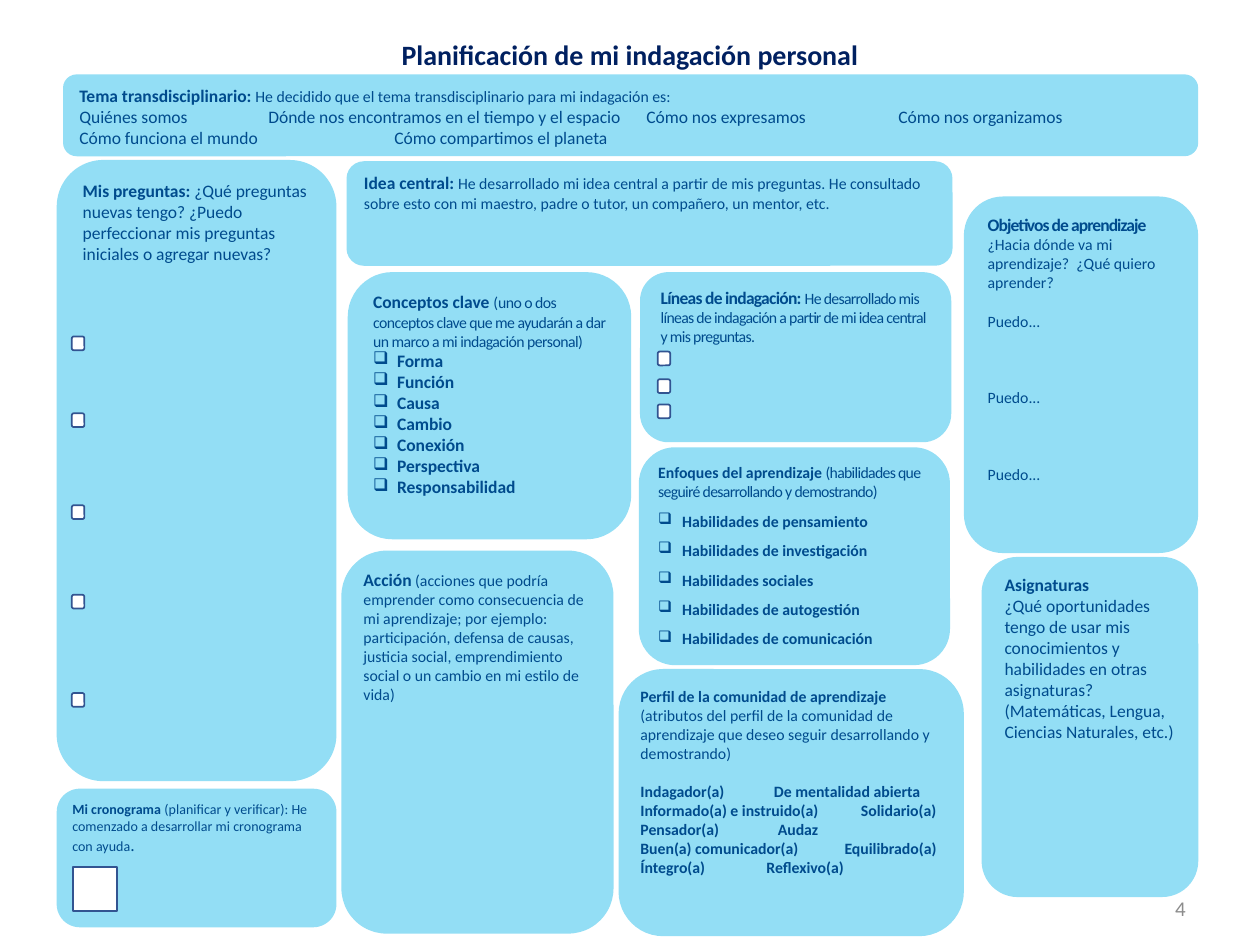
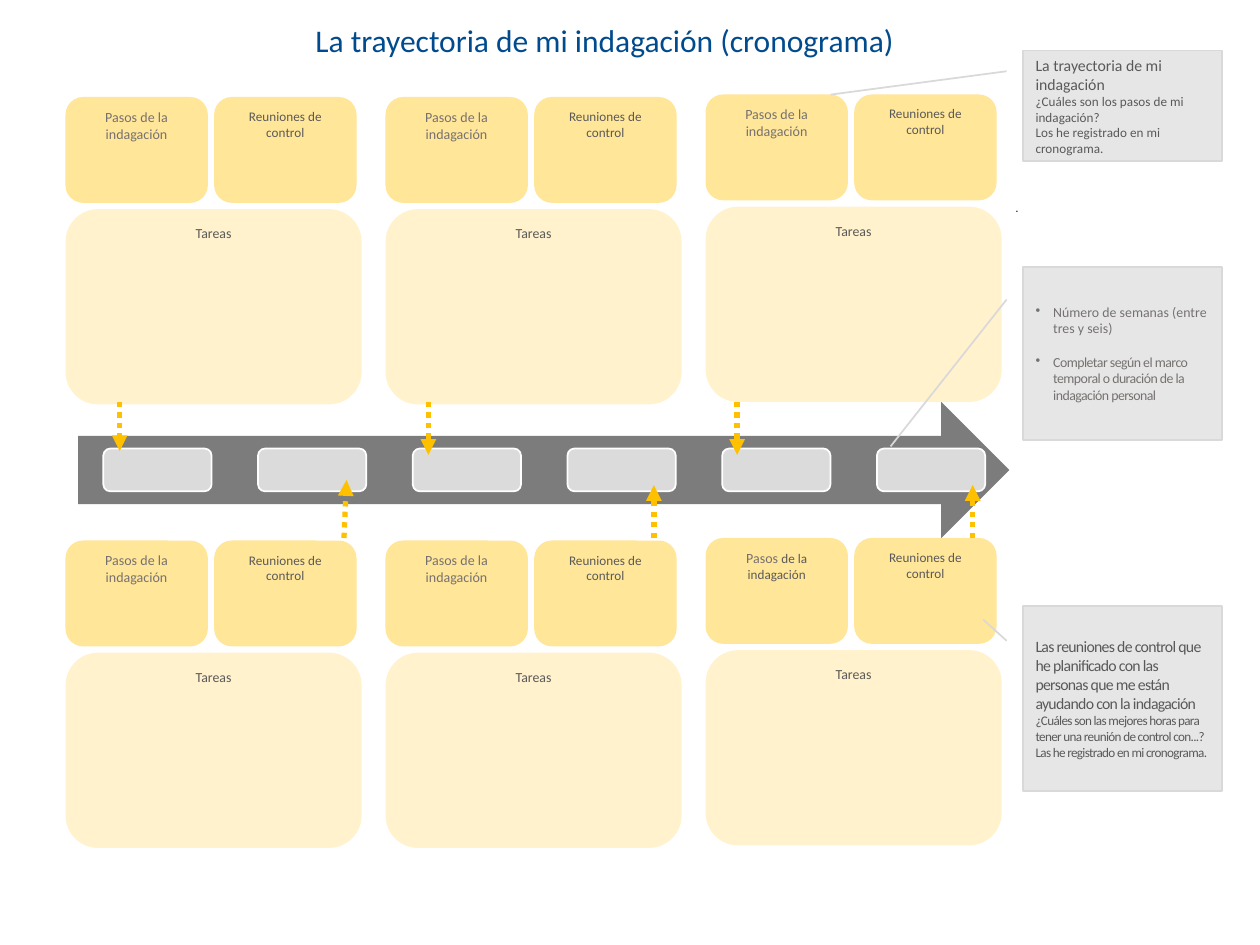
from lxml import etree
from pptx import Presentation
from pptx.dml.color import RGBColor
from pptx.enum import dml, shapes, text
from pptx.oxml.ns import qn
from pptx.util import Inches, Pt

FONT = "Calibri"
WHITE = RGBColor(0xFF, 0xFF, 0xFF)
BLACK = RGBColor(0x00, 0x00, 0x00)
NAVY = RGBColor(0x00, 0x20, 0x60)
BLUE = RGBColor(0x00, 0x4B, 0x8D)
SKY = RGBColor(0x93, 0xDE, 0xF5)
CHECK_LINE = RGBColor(0x32, 0x54, 0x91)
PAGE_GRAY = RGBColor(0x8C, 0x8C, 0x8C)
DARK_GRAY = RGBColor(0x59, 0x59, 0x59)
WARM_GRAY = RGBColor(0x76, 0x71, 0x71)
ARROW_GRAY = RGBColor(0x7C, 0x7C, 0x7C)
WEEK_GRAY = RGBColor(0xDB, 0xDB, 0xDB)
NOTE_FILL = RGBColor(0xE7, 0xE6, 0xE6)
NOTE_LINE = RGBColor(0xD9, 0xD9, 0xD9)
AMBER = RGBColor(0xFF, 0xC0, 0x00)
YELLOW = RGBColor(0xFF, 0xE6, 0x99)
CREAM = RGBColor(0xFF, 0xF2, 0xCC)

ROUND = shapes.MSO_SHAPE.ROUNDED_RECTANGLE
TOP, MIDDLE = text.MSO_ANCHOR.TOP, text.MSO_ANCHOR.MIDDLE
LEFT, CENTER, RIGHT = text.PP_ALIGN.LEFT, text.PP_ALIGN.CENTER, text.PP_ALIGN.RIGHT


def add_box(page, kind, at, fill, line=None):
    box = page.shapes.add_shape(kind, *map(Inches, at))
    box.shadow.inherit = False
    box.fill.solid()
    box.fill.fore_color.rgb = fill
    if line is None:
        box.line.fill.background()
    else:
        box.line.color.rgb = line
        box.line.width = Pt(1)
    return box


def write(box, paragraphs, color, align=LEFT, anchor=TOP, inset=(0.1, 0.05), font=FONT):
    """Fill a box from (runs, options) pairs; a run is (text, size, bold, spacing)."""
    frame = box.text_frame
    frame.word_wrap = True
    frame.vertical_anchor = anchor
    frame.margin_left = frame.margin_right = Inches(inset[0])
    frame.margin_top = frame.margin_bottom = Inches(inset[1])
    for index, (runs, options) in enumerate(paragraphs):
        para = frame.paragraphs[0] if index == 0 else frame.add_paragraph()
        para.alignment = align
        para.space_before = Pt(options.get("before", 0))
        props = para._p.get_or_add_pPr()
        if "bullet" in options:
            indent = Inches(options["indent"])
            props.set("marL", str(indent))
            props.set("indent", str(-indent))
            etree.SubElement(props, qn("a:buChar")).set("char", options["bullet"])
        if "tabs" in options:
            stops = etree.SubElement(props, qn("a:tabLst"))
            for stop in options["tabs"]:
                etree.SubElement(stops, qn("a:tab"), pos=str(Inches(stop)), algn="l")
        for words, size, bold, spacing in runs:
            span = para.add_run()
            span.text = words
            span.font.name = font
            span.font.size = Pt(size)
            span.font.bold = bold
            span.font.color.rgb = color
            if spacing:
                span._r.get_or_add_rPr().set("spc", str(round(spacing * 100)))


deck = Presentation()
deck.slide_width, deck.slide_height = Inches(10), Inches(7.5)
plan = deck.slides.add_slide(deck.slide_layouts[6])
timeline = deck.slides.add_slide(deck.slide_layouts[6])

# Titles, page number and stray mark
for page, at, words, size, bold, color, align, anchor, font in [
    (plan, (7.26, 7.01, 2.25, 0.4), "4", 12, False, PAGE_GRAY, RIGHT, MIDDLE, FONT),
    (plan, (0, 0.25, 10, 0.37), "Planificación de mi indagación personal",
     16, True, NAVY, CENTER, TOP, FONT),
    (timeline, (-0.2, 0.12, 10, 0.57), "La trayectoria de mi indagación (cronograma)",
     18, False, BLUE, CENTER, TOP, FONT),
    (timeline, (7.96, 1.54, 1.88, 0.21), ".", 6.8, False, BLACK, LEFT, TOP, "Arial"),
]:
    label = page.shapes.add_textbox(*map(Inches, at))
    write(label, [([(words, size, bold, 0)], {})], color, align, anchor, font=font)

# Slide 1: planning panels
WIDE, NARROW = (0.1, 0.05), (0.07, 0.04)
concepts = ["Forma", "Función", "Causa", "Cambio", "Conexión", "Perspectiva",
            "Responsabilidad"]
skills = ["pensamiento", "investigación", "sociales", "autogestión", "comunicación"]
profile = [("Indagador(a)\tDe mentalidad abierta", 1.06),
           ("Informado(a) e instruido(a)\tSolidario(a)", 1.75),
           ("Pensador(a)\tAudaz", 1.09),
           ("Buen(a) comunicador(a)\tEquilibrado(a)", 1.62),
           ("Íntegro(a)\tReflexivo(a)", 1)]

panels = [
    ((0.5, 0.59, 9.01, 0.65), WIDE, [
        ([("Tema transdisciplinario: ", 10, True, 0),
          ("He decidido que el tema transdisciplinario para mi indagación es:", 9, False, 0)], {}),
        ([("Quiénes somos\tDónde nos encontramos en el tiempo y el espacio"
           "\tCómo nos expresamos\tCómo nos organizamos", 10, False, 0)],
         {"tabs": [1.5, 4.5, 6.5]}),
        ([("Cómo funciona el mundo\tCómo compartimos el planeta", 10, False, 0)],
         {"tabs": [2.5]})]),
    ((0.45, 1.27, 2.22, 4.93), WIDE, [
        ([("Mis preguntas: ", 10, True, 0),
          ("¿Qué preguntas nuevas tengo? ¿Puedo perfeccionar mis preguntas iniciales "
           "o agregar nuevas?", 10, False, 0)], {})]),
    ((2.75, 1.28, 4.81, 0.83), WIDE, [
        ([("Idea central: ", 10, True, 0),
          ("He desarrollado mi idea central a partir de mis preguntas. He consultado "
           "sobre esto con mi maestro, padre o tutor, un compañero, un mentor, etc.",
           9, False, 0)], {})]),
    ((2.76, 2.16, 2.25, 2.12), WIDE, [
        ([("Conceptos clave ", 10, True, 0), ("(", 9, False, 0),
          ("uno o dos conceptos clave que me ayudarán a dar un marco a mi indagación "
           "personal)", 9, False, -0.3)], {})]
     + [([(concept, 10, True, 0)], {"bullet": "❑", "indent": 0.19}) for concept in concepts]),
    ((5.08, 2.16, 2.47, 1.35), WIDE, [
        ([("Líneas de indagación: ", 10, True, -0.4),
          ("He desarrollado mis líneas de indagación a partir de mi idea central y mis "
           "preguntas.", 9, False, -0.4)], {})]),
    ((2.71, 4.37, 2.16, 3.04), NARROW, [
        ([("Acción", 10, True, 0),
          (" (acciones que podría emprender como consecuencia de mi aprendizaje; por "
           "ejemplo: participación, defensa de causas, justicia social, emprendimiento "
           "social o un cambio en mi estilo de vida)", 9, False, 0)], {})]),
    ((7.65, 1.56, 1.86, 2.83), WIDE, [
        ([("Objetivos de aprendizaje", 10, True, -0.5)], {}),
        ([("¿Hacia dónde va mi aprendizaje?  ¿Qué quiero aprender?", 9, False, 0)], {})]
     + [([("Puedo...", 9, False, 0)], {"before": gap}) for gap in (11, 33, 33)]),
    ((7.79, 4.42, 1.72, 2.7), WIDE, [
        ([("Asignaturas", 10, True, 0)], {}),
        ([("¿Qué oportunidades tengo de usar mis conocimientos y habilidades en otras "
           "asignaturas? (Matemáticas, Lengua, Ciencias Naturales, etc.)",
           10, False, 0)], {})]),
    ((5.07, 3.55, 2.47, 1.73), NARROW, [
        ([("Enfoques del aprendizaje ", 9, True, 0),
          ("(habilidades que seguiré desarrollando y demostrando)", 9, False, -0.4)], {})]
     + [([("Habilidades " + ("" if skill == "sociales" else "de ") + skill, 9, True, 0)],
         {"bullet": "❑", "indent": 0.19, "before": 6}) for skill in skills]),
    ((4.91, 5.31, 2.74, 2.12), NARROW, [
        ([("Perfil de la comunidad de aprendizaje", 9, True, 0),
          (" (atributos del perfil de la comunidad de aprendizaje que deseo seguir "
           "desarrollando y demostrando)", 9, False, 0)], {})]
     + [([(pair, 9, True, 0)], {"tabs": [stop], "before": 0 if row else 11})
        for row, (pair, stop) in enumerate(profile)]),
    ((0.45, 6.26, 2.22, 1.1), NARROW, [
        ([("Mi cronograma ", 8, True, 0),
          ("(planificar y verificar): He comenzado a desarrollar mi cronograma con ayuda",
           8, False, 0), (".", 10, False, 0)], {})]),
]
for at, inset, paragraphs in panels:
    write(add_box(plan, ROUND, at, SKY), paragraphs, BLUE, inset=inset)

for left, tops in [(0.57, (2.67, 3.28, 4.01, 4.72, 5.5)), (5.22, (2.79, 3.01, 3.21))]:
    for top in tops:
        add_box(plan, ROUND, (left, top, 0.1, 0.11), WHITE, CHECK_LINE)
add_box(plan, shapes.MSO_SHAPE.RECTANGLE, (0.58, 6.88, 0.35, 0.35), WHITE, CHECK_LINE)

# Slide 2: week arrow
add_box(timeline, shapes.MSO_SHAPE.RIGHT_ARROW, (0.62, 3.19, 7.39, 1.08), ARROW_GRAY)
for week in range(6):
    add_box(timeline, ROUND, (0.82 + 1.228 * week, 3.56, 0.86, 0.34), WEEK_GRAY, WHITE)

# Step, meeting and task cards: two rows of three
for row_top in (0.77, 4.29):
    for column in range(3):
        left = 0.52 + 2.54 * column
        top = row_top - (0.02 if column == 2 else 0)
        for dx, dy, width, height, fill, words, size, color in [
            (0, 0, 1.13, 0.84, YELLOW, "Pasos de la indagación", 8, WARM_GRAY),
            (1.18, 0, 1.13, 0.84, YELLOW, "Reuniones de control", 7.5, DARK_GRAY),
            (0, 0.89, 2.35, 1.55, CREAM, "Tareas", 7.9, DARK_GRAY),
        ]:
            card = add_box(timeline, ROUND, (left + dx, top + dy, width, height), fill)
            runs = [(words, size, False, 0)]
            last_steps = words.startswith("Pasos") and row_top > 4 and column == 2
            if last_steps:
                runs = [("Pasos ", 8, False, 0), ("de la indagación", 7.5, False, 0)]
            write(card, [(runs, {})], color, CENTER)
            if last_steps:
                card.text_frame.paragraphs[0].runs[1].font.color.rgb = DARK_GRAY

# Dotted arrows between cards and weeks
for x1, y1, x2, y2 in [
    (2.73, 4.27, 2.75, 3.81), (5.19, 4.27, 5.19, 3.85), (7.72, 4.27, 7.72, 3.85),
    (0.95, 3.19, 0.95, 3.58), (3.4, 3.19, 3.4, 3.61), (5.85, 3.19, 5.85, 3.61),
]:
    arrow = timeline.shapes.add_connector(
        shapes.MSO_CONNECTOR.STRAIGHT, *map(Inches, (x1, y1, x2, y2)))
    arrow.line.color.rgb = AMBER
    arrow.line.width = Pt(3)
    arrow.line.dash_style = dml.MSO_LINE.ROUND_DOT
    etree.SubElement(arrow.line._get_or_add_ln(), qn("a:tailEnd")).set("type", "triangle")
    etree.SubElement(arrow._element.spPr, qn("a:effectLst"))

# Callout notes; each target is the line end as (down, across) shares of the note
bullet = {"bullet": "•", "indent": 0.14}
notes = [
    (0.4, 0.88, (0.399, -0.967), DARK_GRAY, [
        ([("La trayectoria de mi indagación", 9, False, 0)], {}),
        ([("¿Cuáles son los pasos de mi indagación?", 7.5, False, 0)], {}),
        ([("Los he registrado en mi cronograma.", 7.5, False, 0)], {})]),
    (2.12, 1.37, (1.039, -0.666), WARM_GRAY, [
        ([("Número de semanas (entre tres y seis)", 7.9, False, 0)], bullet),
        ([("Completar según el marco temporal o duración de la indagación personal",
           7.9, False, -0.3)], {**bullet, "before": 9.6})]),
    (4.81, 1.47, (0.073, -0.201), DARK_GRAY, [
        ([("Las reuniones de control que he planificado con las personas que me están "
           "ayudando con la indagación", 9, False, -0.4)], {}),
        ([("¿Cuáles son las mejores horas para tener una reunión de control con...?",
           7.5, False, -0.4)], {}),
        ([("Las he registrado en mi cronograma.", 7.5, False, -0.4)], {})]),
]
for top, height, target, color, paragraphs in notes:
    note = add_box(timeline, shapes.MSO_SHAPE.LINE_CALLOUT_1, (8.12, top, 1.58, height),
                   NOTE_FILL, NOTE_LINE)
    for index, value in enumerate((0.188, -0.083, *target)):
        note.adjustments[index] = value
    write(note, paragraphs, color, anchor=MIDDLE)

deck.save("out.pptx")
